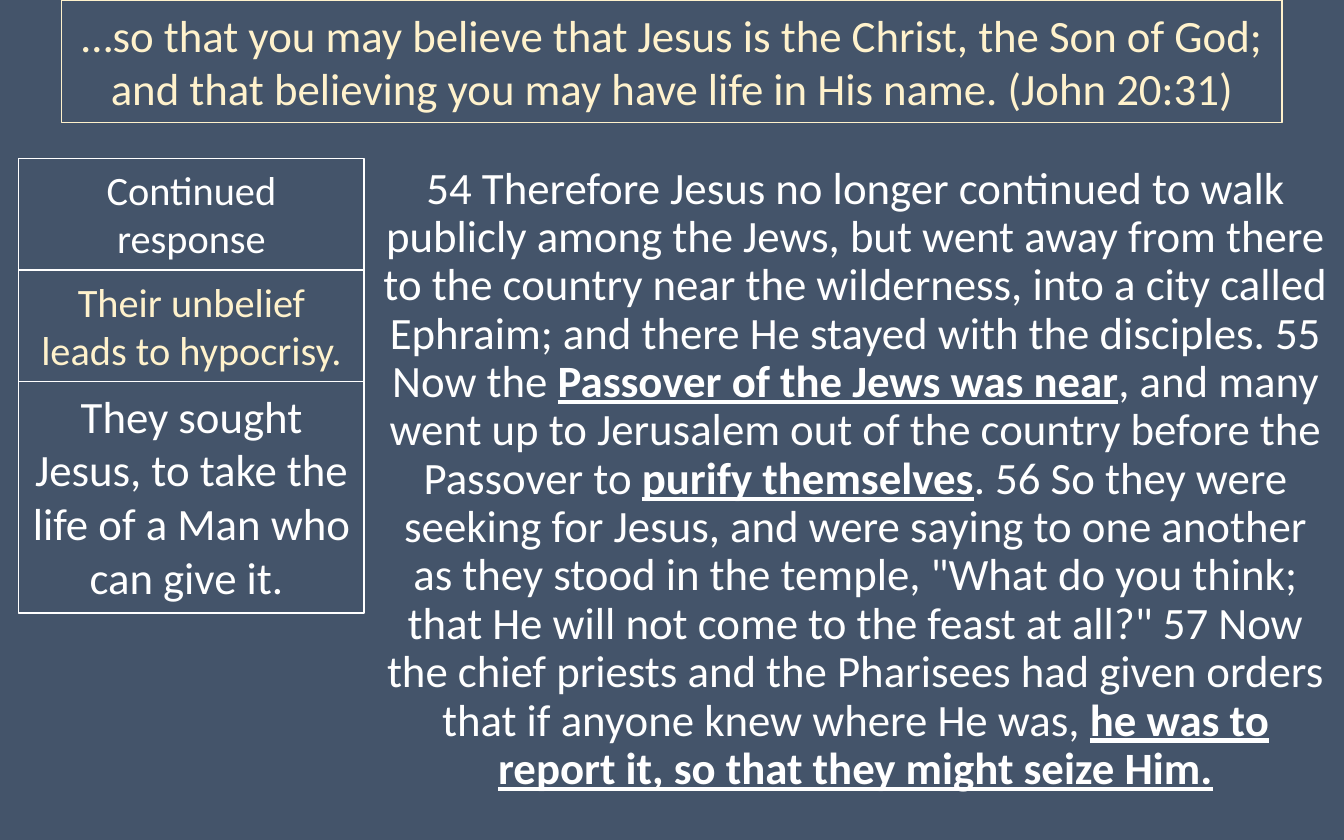
"""Build a scripture slide with a key verse, three notes and a passage."""
from dataclasses import dataclass

from lxml.etree import SubElement
from pptx import Presentation
from pptx.dml.color import RGBColor
from pptx.enum.shapes import MSO_SHAPE
from pptx.enum.text import MSO_ANCHOR, MSO_AUTO_SIZE, PP_ALIGN
from pptx.oxml.ns import qn
from pptx.slide import Slide
from pptx.text.text import TextFrame
from pptx.util import Inches, Pt

COLORS = {"background": "44546A", "white": "FFFFFF", "cream": "FFF2CC"}
FONT = "Calibri"
NOTE_LEFT, NOTE_TOP, NOTE_WIDTH = 0.14, 1.18, 2.57


@dataclass(frozen=True)
class Note:
    text: str
    height: float
    size: float = 21.6
    color: str = "white"


@dataclass(frozen=True)
class Phrase:
    text: str
    emphasis: bool = False


VERSE = (
    "…so that you may believe that Jesus is the Christ, the Son of God; "
    "and that believing you may have life in His name. (John 20:31)"
)
NOTES = [
    Note("Continued response", 0.83),
    Note("Their unbelief leads to hypocrisy.", 0.83, color="cream"),
    Note("They sought Jesus, to take the life of a Man who can give it. ", 1.72, size=24),
]
PASSAGE = [
    Phrase(
        "54 Therefore Jesus no longer continued to walk publicly among the Jews, "
        "but went away from there to the country near the wilderness, into a city "
        "called Ephraim; and there He stayed with the disciples. 55 Now the "
    ),
    Phrase("Passover of the Jews was near", True),
    Phrase(
        ", and many went up to Jerusalem out of the country before the Passover to "
    ),
    Phrase("purify themselves", True),
    Phrase(
        ". 56 So they were seeking for Jesus, and were saying to one another as they "
        'stood in the temple, "What do you think; that He will not come to the feast '
        'at all?" 57 Now the chief priests and the Pharisees had given orders that '
        "if anyone knew where He was, "
    ),
    Phrase("he was to report it, so that they might seize Him.", True),
]


def write_text(
    text_frame: TextFrame,
    text: str,
    *,
    size: float = 24,
    color: str = "white",
    emphasis: bool = False,
) -> None:
    """Append a formatted run to the centred first paragraph."""
    paragraph = text_frame.paragraphs[0]
    paragraph.alignment = PP_ALIGN.CENTER
    run = paragraph.add_run()
    run.text = text
    run.font.name = FONT
    run.font.size = Pt(size)
    run.font.bold = emphasis
    run.font.underline = emphasis
    run.font.color.rgb = RGBColor.from_string(COLORS[color])


def add_box(
    slide: Slide,
    text: str,
    left: float,
    top: float,
    width: float,
    height: float,
    *,
    size: float = 24,
    color: str = "white",
    line: str = "white",
    anchor: MSO_ANCHOR = MSO_ANCHOR.TOP,
) -> None:
    """Draw an outlined, unfilled rectangle holding text."""
    shape = slide.shapes.add_shape(
        MSO_SHAPE.RECTANGLE, Inches(left), Inches(top), Inches(width), Inches(height)
    )
    shape.shadow.inherit = False
    shape.fill.background()
    shape.line.color.rgb = RGBColor.from_string(COLORS[line])
    shape.line.width = Pt(0.75)
    text_frame = shape.text_frame
    text_frame.word_wrap = True
    text_frame.auto_size = MSO_AUTO_SIZE.SHAPE_TO_FIT_TEXT
    text_frame.vertical_anchor = anchor
    write_text(text_frame, text, size=size, color=color)


def fill_passage(slide: Slide) -> None:
    """Place the passage in the body placeholder without a bullet."""
    body = slide.placeholders[1]
    body.left, body.top = Inches(2.73), Inches(1.18)
    body.width, body.height = Inches(7.27), Inches(5.07)
    text_frame = body.text_frame
    text_frame.word_wrap = True
    text_frame.auto_size = MSO_AUTO_SIZE.NONE
    text_frame.vertical_anchor = MSO_ANCHOR.TOP
    paragraph = text_frame.paragraphs[0]
    paragraph.line_spacing = 0.9
    paragraph.space_before = Pt(7.5)
    properties = paragraph._p.get_or_add_pPr()
    properties.set("marL", "0")
    properties.set("indent", "0")
    SubElement(properties, qn("a:buNone"))
    for phrase in PASSAGE:
        write_text(text_frame, phrase.text, emphasis=phrase.emphasis)


def main() -> None:
    """Assemble and save the slide."""
    presentation = Presentation()
    presentation.slide_width, presentation.slide_height = Inches(10), Inches(6.25)
    slide = presentation.slides.add_slide(presentation.slide_layouts[1])
    slide.background.fill.solid()
    slide.background.fill.fore_color.rgb = RGBColor.from_string(COLORS["background"])
    title = slide.shapes.title.element
    title.getparent().remove(title)

    fill_passage(slide)
    add_box(
        slide, VERSE, 0.46, 0, 9.08, 0.91,
        color="cream", line="cream", anchor=MSO_ANCHOR.MIDDLE,
    )
    top = NOTE_TOP
    for note in NOTES:
        add_box(
            slide, note.text, NOTE_LEFT, top, NOTE_WIDTH, note.height,
            size=note.size, color=note.color,
        )
        top += note.height
    presentation.save("out.pptx")


if __name__ == "__main__":
    main()
